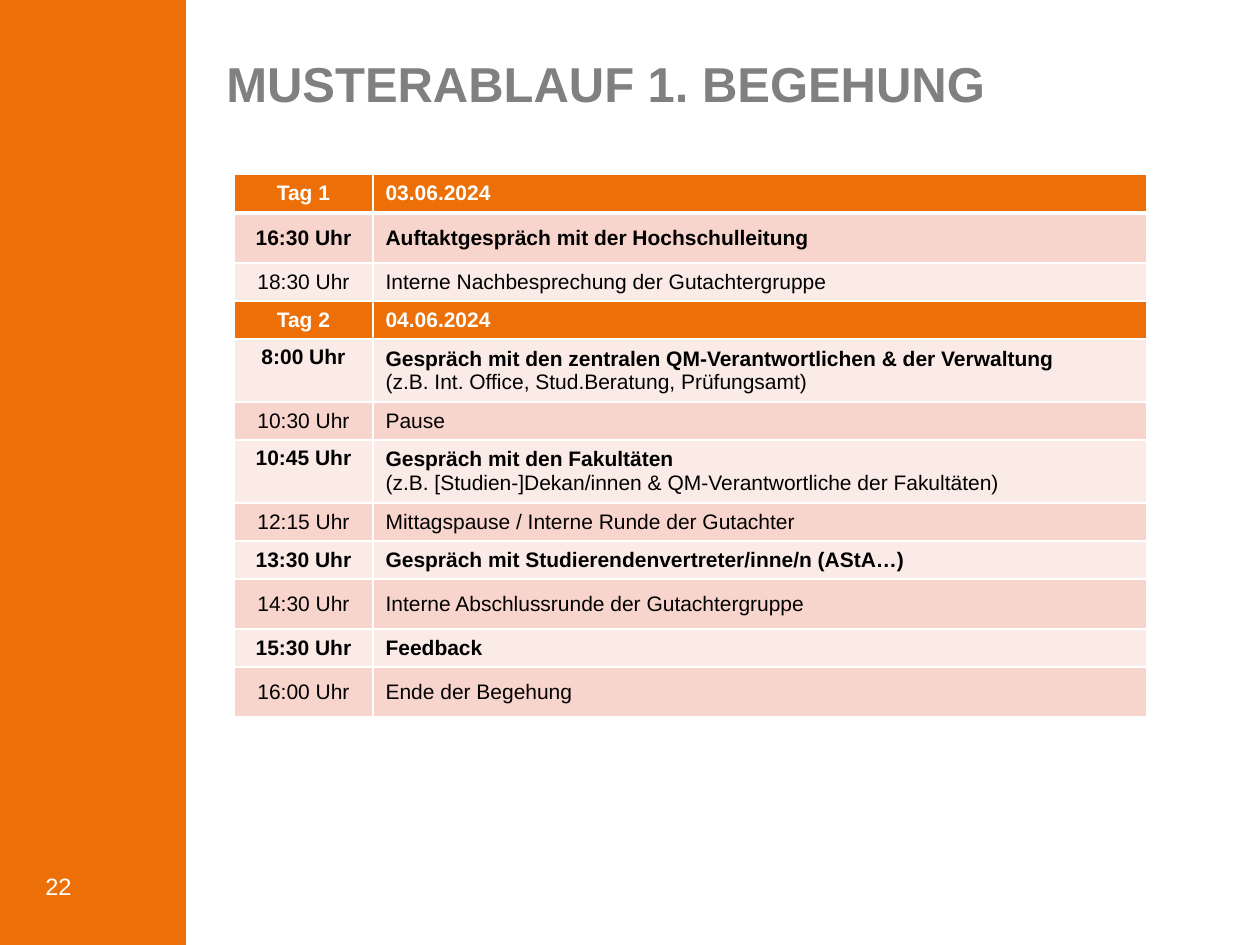
import pptx
import pptx.util
import pptx.dml.color
import pptx.enum.shapes
import pptx.enum.text
import pptx.oxml
import pptx.oxml.ns
from dataclasses import dataclass

ANCHOR = pptx.enum.text.MSO_ANCHOR
ALIGN = pptx.enum.text.PP_ALIGN


@dataclass(frozen=True)
class Theme:
    font: str = "Arial"
    orange: str = "EC7007"
    dark_band: str = "F8D5CC"
    light_band: str = "FBEBE7"
    white: str = "FFFFFF"
    black: str = "000000"
    grey: str = "808080"
    title_size: float = 28
    table_size: float = 12
    number_size: float = 13.5
    rule: int = 1
    header_rule: int = 3


THEME = Theme()
TITLE = "MUSTERABLAUF 1. BEGEHUNG"
NUMBER = "22"

# row kind, row height, time, topic, optional detail on a second line
SCHEDULE = [
    ("day", 39, "Tag 1", "03.06.2024", ""),
    ("talk", 50, "16:30 Uhr", "Auftaktgespräch mit der Hochschulleitung", ""),
    ("internal", 38, "18:30 Uhr", "Interne Nachbesprechung der Gutachtergruppe", ""),
    ("day", 38, "Tag 2", "04.06.2024", ""),
    ("talk", 63, "8:00 Uhr", "Gespräch mit den zentralen QM-Verantwortlichen & der Verwaltung",
     "(z.B. Int. Office, Stud.Beratung, Prüfungsamt)"),
    ("internal", 38, "10:30 Uhr", "Pause", ""),
    ("talk", 63, "10:45 Uhr", "Gespräch mit den Fakultäten",
     "(z.B. [Studien-]Dekan/innen & QM-Verantwortliche der Fakultäten)"),
    ("internal", 38, "12:15 Uhr", "Mittagspause / Interne Runde der Gutachter", ""),
    ("talk", 38, "13:30 Uhr", "Gespräch mit Studierendenvertreter/inne/n (AStA…)", ""),
    ("internal", 50, "14:30 Uhr", "Interne Abschlussrunde der Gutachtergruppe", ""),
    ("talk", 38, "15:30 Uhr", "Feedback", ""),
    ("internal", 50, "16:00 Uhr", "Ende der Begehung", ""),
]
COLUMNS = (139, 774)
TABLE_AT = (234, 174)
SLIDE = (1260, 945)
SIDEBAR = (0, 0, 186, 945)
TITLE_BOX = (214, 54, 968, 78)
NUMBER_BOX = (33, 838, 116, 68)


def px(n):
    return pptx.util.Emu(n * 7257)


def rgb(value):
    return pptx.dml.color.RGBColor.from_string(value)


def add_run(p, text, size, color, bold=False):
    r = p.add_run()
    r.text = text
    r.font.color.rgb = rgb(color)
    for name, value in dict(name=THEME.font, size=pptx.util.Pt(size), bold=bold).items():
        setattr(r.font, name, value)


def add_text(s, box, text, size, color, bold=False, anchor=ANCHOR.TOP, spacing=None):
    tf = s.shapes.add_textbox(*map(px, box)).text_frame
    tf.word_wrap = True
    tf.vertical_anchor = anchor
    p = tf.paragraphs[0]
    p.line_spacing = spacing
    add_run(p, text, size, color, bold)


def add_borders(cell, widths):
    """Draw white left, right, top and bottom rules of the given point widths."""
    for side, width in zip("LRTB", widths):
        cell._tc.get_or_add_tcPr().append(pptx.oxml.parse_xml(
            f'<a:ln{side} {pptx.oxml.ns.nsdecls("a")} w="{pptx.util.Pt(width)}">'
            f'<a:solidFill><a:srgbClr val="{THEME.white}"/></a:solidFill></a:ln{side}>'))


def add_schedule(s):
    heights = [row[1] for row in SCHEDULE]
    table = s.shapes.add_table(len(SCHEDULE), len(COLUMNS), *map(
        px, (*TABLE_AT, sum(COLUMNS), sum(heights)))).table
    for column, width in zip(table.columns, COLUMNS):
        column.width = px(width)
    for i, (kind, height, time, topic, detail) in enumerate(SCHEDULE):
        table.rows[i].height = px(height)
        band = THEME.dark_band if i % 2 else THEME.light_band
        fill = THEME.orange if kind == "day" else band
        color = THEME.white if kind == "day" else THEME.black
        top = THEME.header_rule if i == 1 else THEME.rule
        bottom = THEME.header_rule if i == 0 else THEME.rule
        for j, text in enumerate((time, topic)):
            cell = table.cell(i, j)
            add_borders(cell, (THEME.rule, THEME.rule, top, bottom))
            cell.fill.solid()
            cell.fill.fore_color.rgb = rgb(fill)
            cell.vertical_anchor = ANCHOR.TOP if detail and j == 0 else ANCHOR.MIDDLE
            p = cell.text_frame.paragraphs[0]
            p.alignment = ALIGN.LEFT if j else ALIGN.CENTER
            add_run(p, text, THEME.table_size, color, kind != "internal")
            if detail and j:
                p.add_line_break()
                add_run(p, detail, THEME.table_size, color)


def main():
    prs = pptx.Presentation()
    prs.slide_width, prs.slide_height = map(px, SLIDE)
    s = prs.slides.add_slide(prs.slide_layouts[6])
    sp = s.shapes.add_shape(pptx.enum.shapes.MSO_SHAPE.RECTANGLE, *map(px, SIDEBAR))
    sp.shadow.inherit = False
    sp.fill.solid()
    sp.fill.fore_color.rgb = rgb(THEME.orange)
    sp.line.fill.background()
    add_schedule(s)
    add_text(s, TITLE_BOX, TITLE, THEME.title_size, THEME.grey, bold=True, spacing=0.9)
    add_text(s, NUMBER_BOX, NUMBER, THEME.number_size, THEME.white, anchor=ANCHOR.BOTTOM)
    prs.save("out.pptx")


if __name__ == "__main__":
    main()
